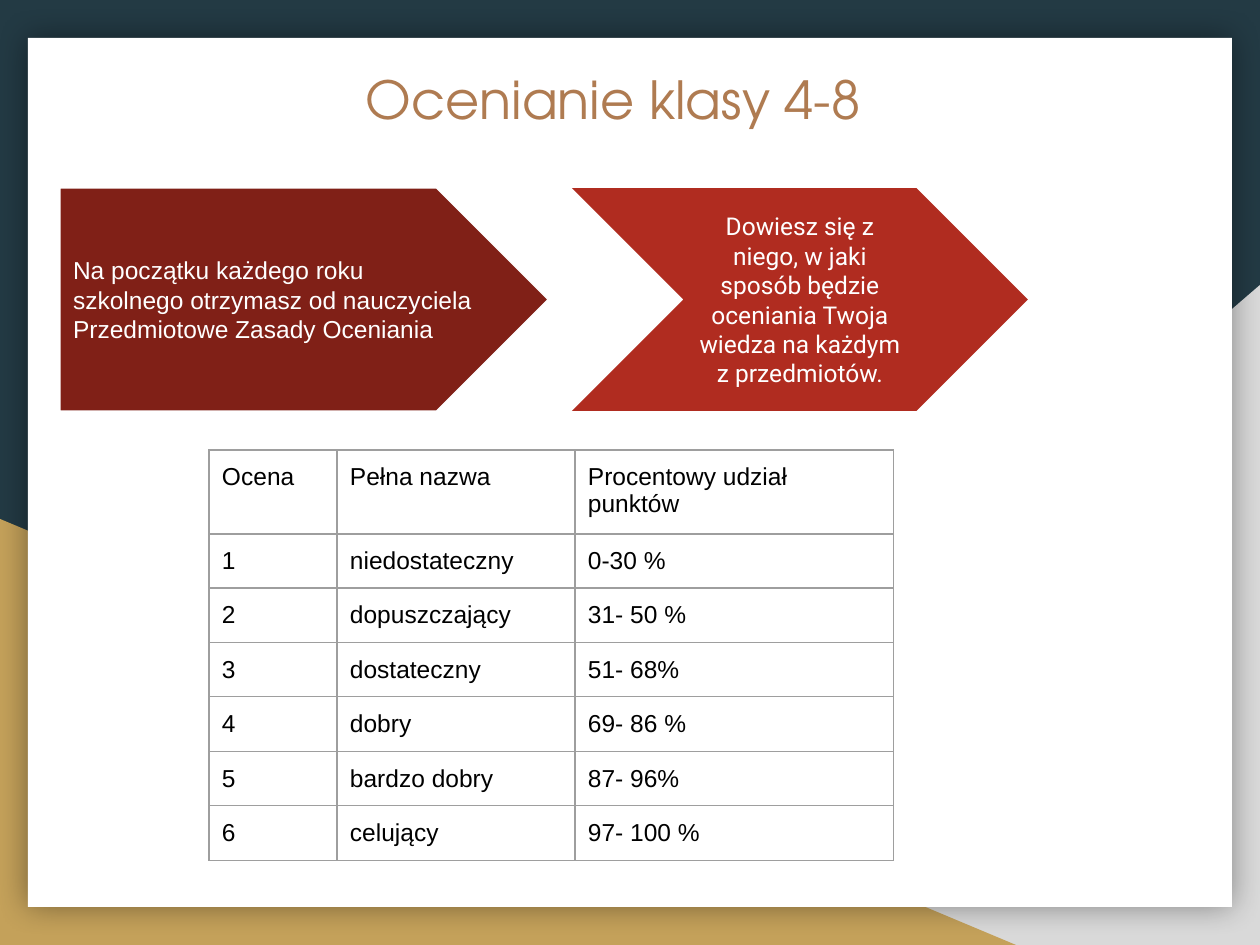
from lxml import etree
from pptx import Presentation
from pptx import util as u
from pptx.dml.color import RGBColor
from pptx.enum import shapes, text
from pptx.oxml import ns, parse_xml

EMU_PER_PX = 914400 / 126
INSET = 13

NAVY = RGBColor(0x23, 0x3A, 0x44)
GRAY = RGBColor(0xD9, 0xD9, 0xD9)
GOLD = RGBColor(0xC4, 0xA1, 0x5A)
WHITE = RGBColor(0xFF, 0xFF, 0xFF)
BLACK = RGBColor(0x00, 0x00, 0x00)
BROWN = RGBColor(0xAF, 0x7B, 0x51)
DARK_RED = RGBColor(0x80, 0x20, 0x17)
RED = RGBColor(0xB0, 0x2C, 0x20)
BORDER = RGBColor(0x9E, 0x9E, 0x9E)

GRADES = [
    ("Ocena", "Pełna nazwa", "Procentowy udział punktów"),
    ("1", "niedostateczny", "0-30 %"),
    ("2", "dopuszczający", "31- 50 %"),
    ("3", "dostateczny", "51- 68%"),
    ("4", "dobry", "69- 86 %"),
    ("5", "bardzo dobry", "87- 96%"),
    ("6", "celujący", "97- 100 %"),
]
COLUMN_WIDTHS = [128, 238, 319]
ROW_HEIGHTS = [84] + [54, 55] * 3


def px(length):
    return u.Emu(round(length * EMU_PER_PX))


def box(*lengths):
    return [px(length) for length in lengths]


def style_font(paragraph, name, size, color):
    paragraph.font.name = name
    paragraph.font.size = u.Pt(size)
    paragraph.font.color.rgb = color


def set_insets(target):
    """Give a text frame or a table cell equal margins."""
    target.margin_left = target.margin_right = px(INSET)
    target.margin_top = target.margin_bottom = px(INSET)


def add_filled(slide, kind, bounds, fill):
    shape = slide.shapes.add_shape(kind, *box(*bounds))
    shape.shadow.inherit = False
    shape.fill.solid()
    shape.fill.fore_color.rgb = fill
    shape.line.fill.background()
    return shape


def add_soft_shadow(shape):
    effects = shape._element.spPr.find(ns.qn("a:effectLst"))
    effects.append(parse_xml(
        f'<a:outerShdw {ns.nsdecls("a")} blurRad="{u.Pt(18)}" dist="0" '
        'algn="ctr" rotWithShape="0"><a:srgbClr val="000000">'
        '<a:alpha val="40000"/></a:srgbClr></a:outerShdw>'))


def add_backdrop(slide):
    slide.background.fill.solid()
    slide.background.fill.fore_color.rgb = NAVY
    triangle = shapes.MSO_SHAPE.RIGHT_TRIANGLE
    right = add_filled(slide, triangle, (494, 285, 766, 660), GRAY)
    right._element.spPr.xfrm.set("flipH", "1")
    add_filled(slide, triangle, (0, 519, 1016, 426), GOLD)
    panel = add_filled(slide, shapes.MSO_SHAPE.RECTANGLE, (28, 38, 1204, 869), WHITE)
    add_soft_shadow(panel)


def set_title(slide, wording):
    title = slide.shapes.title
    title.left, title.top, title.width, title.height = box(164, 54, 1034, 135)
    frame = title.text_frame
    frame.text = wording
    frame.vertical_anchor = text.MSO_ANCHOR.TOP
    frame.auto_size = text.MSO_AUTO_SIZE.NONE
    set_insets(frame)
    paragraph = frame.paragraphs[0]
    paragraph.alignment = text.PP_ALIGN.LEFT
    properties = paragraph._p.get_or_add_pPr()
    properties.set("marL", str(px(126)))
    properties.set("indent", str(px(63)))
    style_font(paragraph, "TeX Gyre Adventor", 30, BROWN)
    # Bring the title in front of the backdrop
    slide.shapes._spTree.append(title._element)


def add_arrow(slide, kind, bounds, fill, wording, font_name, alignment):
    arrow = add_filled(slide, kind, bounds, fill)
    arrow.adjustments[0] = 0.5
    frame = arrow.text_frame
    frame.text = wording
    frame.word_wrap = True
    frame.vertical_anchor = text.MSO_ANCHOR.MIDDLE
    set_insets(frame)
    paragraph = frame.paragraphs[0]
    paragraph.alignment = alignment
    paragraph.line_spacing = u.Pt(16.8)
    style_font(paragraph, font_name, 14, WHITE)
    return arrow


def set_borders(cell):
    properties = cell._tc.get_or_add_tcPr()
    for index, side in enumerate(("lnL", "lnR", "lnT", "lnB")):
        line = etree.Element(ns.qn(f"a:{side}"), w=str(u.Pt(0.75)))
        fill = etree.SubElement(line, ns.qn("a:solidFill"))
        etree.SubElement(fill, ns.qn("a:srgbClr"), val=str(BORDER))
        properties.insert(index, line)


def add_grade_table(slide, left, top):
    frame = slide.shapes.add_table(
        len(GRADES), len(COLUMN_WIDTHS),
        *box(left, top, sum(COLUMN_WIDTHS), sum(ROW_HEIGHTS)))
    table = frame.table
    table.first_row = table.horz_banding = False
    for column, width in zip(table.columns, COLUMN_WIDTHS):
        column.width = px(width)
    for row, height, wordings in zip(table.rows, ROW_HEIGHTS, GRADES):
        row.height = px(height)
        for cell, wording in zip(row.cells, wordings):
            cell.text = wording
            cell.fill.background()
            set_insets(cell)
            set_borders(cell)
            style_font(cell.text_frame.paragraphs[0], "Arial", 14, BLACK)


def main():
    presentation = Presentation()
    presentation.slide_width, presentation.slide_height = box(1260, 945)
    slide = presentation.slides.add_slide(presentation.slide_layouts[5])

    add_backdrop(slide)
    set_title(slide, "Ocenianie klasy 4-8")

    # Two steps
    first = add_arrow(
        slide, shapes.MSO_SHAPE.PENTAGON, (60, 188, 488, 223), DARK_RED,
        "Na początku każdego roku szkolnego otrzymasz od nauczyciela "
        "Przedmiotowe Zasady Oceniania", "Arial", text.PP_ALIGN.LEFT)
    first.line.color.rgb = WHITE
    first.line.width = u.Pt(0.75)
    add_arrow(
        slide, shapes.MSO_SHAPE.CHEVRON, (572, 188, 456, 223), RED,
        "Dowiesz się z niego, w jaki sposób będzie oceniania Twoja wiedza "
        "na każdym z przedmiotów.", "Roboto", text.PP_ALIGN.CENTER)

    # Grading scale
    add_grade_table(slide, 209, 450)

    presentation.save("out.pptx")


if __name__ == "__main__":
    main()
